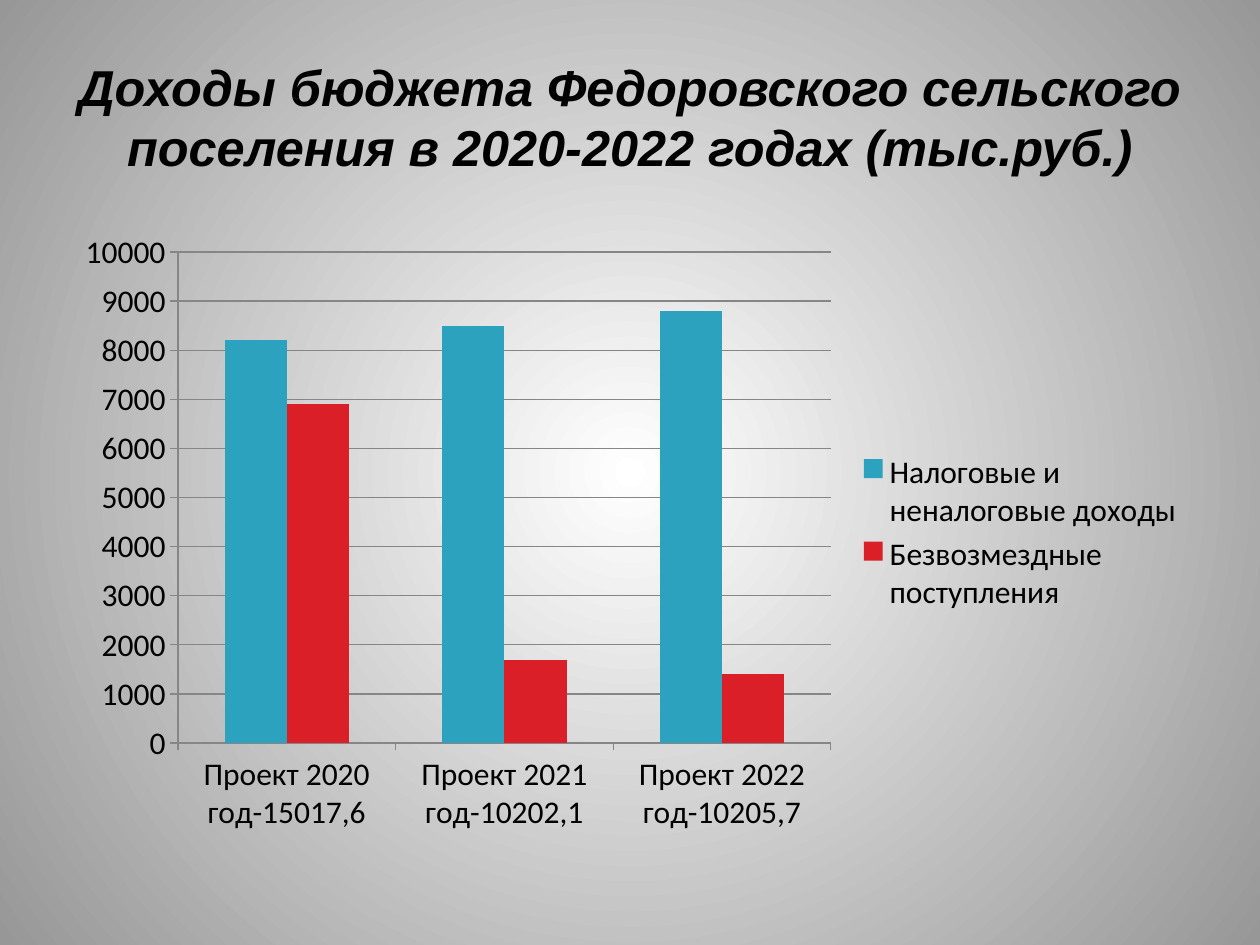
from lxml import etree
from pptx import Presentation
from pptx.chart.data import CategoryChartData
from pptx.dml.color import RGBColor
from pptx.enum.chart import XL_CHART_TYPE, XL_LEGEND_POSITION, XL_TICK_MARK
from pptx.enum.text import MSO_ANCHOR, PP_ALIGN
from pptx.oxml.ns import qn
from pptx.util import Pt

COLUMNS = XL_CHART_TYPE.COLUMN_CLUSTERED
LEGEND_RIGHT = XL_LEGEND_POSITION.RIGHT
TICK_OUTSIDE = XL_TICK_MARK.OUTSIDE
MIDDLE = MSO_ANCHOR.MIDDLE
CENTER = PP_ALIGN.CENTER

BLACK = RGBColor(0x00, 0x00, 0x00)
WHITE = RGBColor(0xFF, 0xFF, 0xFF)
EDGE_GRAY = RGBColor(0x97, 0x97, 0x97)
LINE_GRAY = RGBColor(0x86, 0x86, 0x86)
TEAL = RGBColor(0x2D, 0xA2, 0xBF)
RED = RGBColor(0xDA, 0x1F, 0x28)

TITLE = "Доходы бюджета Федоровского сельского поселения в 2020-2022 годах (тыс.руб.)"
TITLE_FONT = {"name": "Arial", "size": Pt(28.8), "bold": True, "italic": True}
CHART_FONT = {"name": "Calibri", "size": Pt(18)}
VALUE_SCALE = {"minimum_scale": 0, "maximum_scale": 10000, "major_unit": 1000}

CATEGORIES = ["Проект 2020 год-15017,6", "Проект 2021 год-10202,1", "Проект 2022 год-10205,7"]
SERIES = [
    ("Налоговые и неналоговые доходы", [8200, 8500, 8800], TEAL),
    ("Безвозмездные поступления", [6900, 1700, 1400], RED),
]

TITLE_BOX = (Pt(36), Pt(21.6), Pt(648), Pt(90))
CHART_BOX = (Pt(36), Pt(126), Pt(648), Pt(356.4))


def set_attributes(target, values):
    for name, value in values.items():
        setattr(target, name, value)


def set_font(font, values):
    set_attributes(font, values)
    font.color.rgb = BLACK


def set_line(line):
    line.color.rgb = LINE_GRAY
    line.width = Pt(0.75)


def paint_background(slide):
    fill = slide.background.fill
    fill.gradient()
    for stop, position, color in zip(fill.gradient_stops, (0, 1), (WHITE, EDGE_GRAY)):
        stop.position = position
        stop.color.rgb = color
    # Turn the linear gradient into a circular one around the centre
    gradient = slide.element.find(".//" + qn("a:gradFill"))
    gradient.remove(gradient.find(qn("a:lin")))
    circle = etree.SubElement(gradient, qn("a:path"), {"path": "circle"})
    etree.SubElement(circle, qn("a:fillToRect"), dict.fromkeys("ltrb", "50000"))


def add_title(slide, box):
    frame = slide.shapes.add_textbox(*box).text_frame
    set_attributes(frame, {"word_wrap": True, "vertical_anchor": MIDDLE})
    paragraph = frame.paragraphs[0]
    paragraph.alignment = CENTER
    run = paragraph.add_run()
    run.text = TITLE
    set_font(run.font, TITLE_FONT)


def add_income_chart(slide, box):
    data = CategoryChartData()
    data.categories = CATEGORIES
    for name, values, _ in SERIES:
        data.add_series(name, values)
    chart = slide.shapes.add_chart(COLUMNS, *box, data).chart
    chart.has_title = False
    set_font(chart.font, CHART_FONT)

    # Columns
    plot = chart.plots[0]
    set_attributes(plot, {"gap_width": 150, "overlap": 0, "vary_by_categories": False})
    for series, (_, _, color) in zip(plot.series, SERIES):
        series.format.fill.solid()
        series.format.fill.fore_color.rgb = color

    # Axes and gridlines
    for axis in (chart.category_axis, chart.value_axis):
        axis.major_tick_mark = TICK_OUTSIDE
        set_line(axis.format.line)
    set_attributes(chart.value_axis, VALUE_SCALE)
    set_attributes(chart.value_axis.tick_labels,
                   {"number_format": "0", "number_format_is_linked": False})
    set_line(chart.value_axis.major_gridlines.format.line)

    # Legend
    chart.has_legend = True
    set_attributes(chart.legend, {"position": LEGEND_RIGHT, "include_in_layout": False})


def main():
    presentation = Presentation()
    set_attributes(presentation, {"slide_width": Pt(720), "slide_height": Pt(540)})
    slide = presentation.slides.add_slide(presentation.slide_layouts[6])
    paint_background(slide)
    add_title(slide, TITLE_BOX)
    add_income_chart(slide, CHART_BOX)
    presentation.save("out.pptx")


if __name__ == "__main__":
    main()
